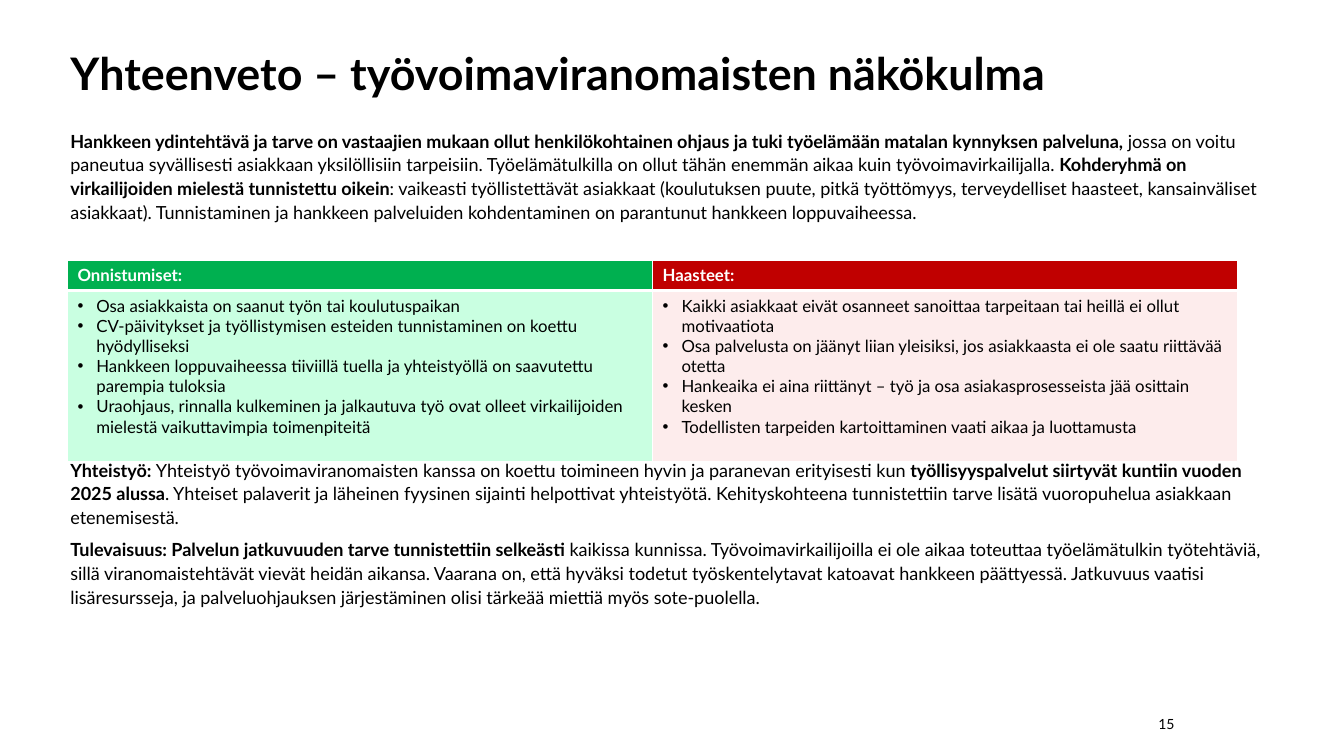
import pptx
import pptx.dml.color
import pptx.enum.text
import pptx.oxml
import pptx.oxml.ns
import pptx.util
from dataclasses import dataclass

Pt = pptx.util.Pt
Align = pptx.enum.text.PP_ALIGN
Anchor = pptx.enum.text.MSO_ANCHOR


@dataclass
class Theme:
    font: str = "Lato"
    ink: str = "000000"
    paper: str = "FFFFFF"
    success: str = "00B050"
    success_tint: str = "C9FFE1"
    challenge: str = "C00000"
    challenge_tint: str = "FDECEC"
    title_size: float = 32
    body_size: float = 12.9
    table_size: float = 12
    number_size: float = 10


def rgb(value):
    return pptx.dml.color.RGBColor.from_string(value)


def apply(target, values):
    for name, value in values.items():
        setattr(target, name, value)


class SlideBuilder:
    def __init__(self, deck, theme):
        self.theme = theme
        self.page = deck.slides.add_slide(deck.slide_layouts[6])

    def spans(self, para, parts, size, color):
        for words, bold in parts:
            span = para.add_run()
            span.text = words
            apply(span.font, {"name": self.theme.font, "size": Pt(size), "bold": bold})
            span.font.color.rgb = rgb(color)

    def paragraphs(self, frame, items, size, color, layout):
        for index, parts in enumerate(items):
            para = frame.paragraphs[0] if index == 0 else frame.add_paragraph()
            apply(para, layout)
            self.spans(para, parts, size, color)
            yield para

    def text(self, place, items, size, anchor=Anchor.TOP, **layout):
        box = self.page.shapes.add_textbox(*map(Pt, place))
        apply(box.text_frame, {"word_wrap": True, "vertical_anchor": anchor})
        list(self.paragraphs(box.text_frame, items, size, self.theme.ink, layout))

    def bullet(self, para):
        props = para._p.get_or_add_pPr()
        indent = Pt(13.5)
        props.set("marL", str(indent))
        props.set("indent", str(-indent))
        space = pptx.oxml.ns.nsdecls("a")
        for tag in ('buFont {} typeface="Arial"', 'buChar {} char="•"'):
            props.append(pptx.oxml.parse_xml("<a:" + tag.format(space) + "/>"))

    def borders(self, cell, bottom):
        widths = {"lnL": 1, "lnR": 1, "lnT": bottom if bottom == 1 else 1, "lnB": bottom}
        for side, width in widths.items():
            cell._tc.get_or_add_tcPr().append(pptx.oxml.parse_xml(
                f'<a:{side} {pptx.oxml.ns.nsdecls("a")} w="{Pt(width)}"><a:solidFill>'
                f'<a:srgbClr val="{self.theme.paper}"/></a:solidFill></a:{side}>'))

    def cell(self, cell, items, fill, color, bottom, bulleted):
        self.borders(cell, bottom)
        cell.fill.solid()
        cell.fill.fore_color.rgb = rgb(fill)
        for para in self.paragraphs(cell.text_frame, items, self.theme.table_size, color, {}):
            if bulleted:
                self.bullet(para)

    def table(self, place, heights, columns):
        table = self.page.shapes.add_table(2, len(columns), *map(Pt, place)).table
        apply(table, {"first_row": False, "horz_banding": False})
        for row, height in zip(table.rows, heights):
            row.height = Pt(height)
        for index, (heading, points, fill, tint) in enumerate(columns):
            table.columns[index].width = Pt(place[2] / len(columns))
            self.cell(table.cell(0, index), [[(heading, True)]], fill, self.theme.paper, 3, False)
            items = [[(point, False)] for point in points]
            self.cell(table.cell(1, index), items, tint, self.theme.ink, 1, True)


INTRO = [[
    ("Hankkeen ydintehtävä ja tarve on vastaajien mukaan ollut henkilökohtainen ohjaus ja tuki "
     "työelämään matalan kynnyksen palveluna, ", True),
    ("jossa on voitu paneutua syvällisesti asiakkaan yksilöllisiin tarpeisiin. Työelämätulkilla on "
     "ollut tähän enemmän aikaa kuin työvoimavirkailijalla. ", False),
    ("Kohderyhmä on virkailijoiden mielestä tunnistettu oikein", True),
    (": vaikeasti työllistettävät asiakkaat (koulutuksen puute, pitkä työttömyys, terveydelliset "
     "haasteet, kansainväliset asiakkaat). Tunnistaminen ja hankkeen palveluiden kohdentaminen on "
     "parantunut hankkeen loppuvaiheessa.", False),
]]
OUTLOOK = [[
    ("Yhteistyö: ", True),
    ("Yhteistyö työvoimaviranomaisten kanssa on koettu toimineen hyvin ja paranevan erityisesti kun ",
     False),
    ("työllisyyspalvelut siirtyvät kuntiin vuoden 2025 alussa", True),
    (". Yhteiset palaverit ja läheinen fyysinen sijainti helpottivat yhteistyötä. Kehityskohteena "
     "tunnistettiin tarve lisätä vuoropuhelua asiakkaan etenemisestä.", False),
], [
    ("Tulevaisuus: Palvelun jatkuvuuden tarve tunnistettiin selkeästi", True),
    (" kaikissa kunnissa. Työvoimavirkailijoilla ei ole aikaa toteuttaa työelämätulkin työtehtäviä, "
     "sillä viranomaistehtävät vievät heidän aikansa. Vaarana on, että hyväksi todetut "
     "työskentelytavat katoavat hankkeen päättyessä. Jatkuvuus vaatisi lisäresursseja, ja "
     "palveluohjauksen järjestäminen olisi tärkeää miettiä myös sote-puolella.", False),
]]
SUCCESSES = [
    "Osa asiakkaista on saanut työn tai koulutuspaikan",
    "CV-päivitykset ja työllistymisen esteiden tunnistaminen on koettu hyödylliseksi",
    "Hankkeen loppuvaiheessa tiiviillä tuella ja yhteistyöllä on saavutettu parempia tuloksia",
    "Uraohjaus, rinnalla kulkeminen ja jalkautuva työ ovat olleet virkailijoiden mielestä "
    "vaikuttavimpia toimenpiteitä",
]
CHALLENGES = [
    "Kaikki asiakkaat eivät osanneet sanoittaa tarpeitaan tai heillä ei ollut motivaatiota",
    "Osa palvelusta on jäänyt liian yleisiksi, jos asiakkaasta ei ole saatu riittävää otetta",
    "Hankeaika ei aina riittänyt – työ ja osa asiakasprosesseista jää osittain kesken",
    "Todellisten tarpeiden kartoittaminen vaati aikaa ja luottamusta",
]


def main():
    theme = Theme()
    deck = pptx.Presentation()
    apply(deck, {"slide_width": Pt(960), "slide_height": Pt(540)})
    builder = SlideBuilder(deck, theme)
    left, width = 43.2, 873.4
    body = {"line_spacing": 1.1, "space_after": Pt(6)}
    builder.text((left, 18.7, width, 67), [[("Yhteenveto – työvoimaviranomaisten näkökulma", True)]],
                 theme.title_size, Anchor.MIDDLE)
    builder.text((left, 87.8, width, 82), INTRO, theme.body_size, **body)
    builder.text((left, 322.8, width, 122), OUTLOOK, theme.body_size, **body)
    builder.text((802.8, 502.6, 43.2, 28.8), [[("15", False)]], theme.number_size,
                 Anchor.MIDDLE, alignment=Align.RIGHT)
    builder.table((48.2, 185.8, 836, 144), (21.6, 122.4), [
        ("Onnistumiset:", SUCCESSES, theme.success, theme.success_tint),
        ("Haasteet:", CHALLENGES, theme.challenge, theme.challenge_tint),
    ])
    deck.save("out.pptx")


if __name__ == "__main__":
    main()
